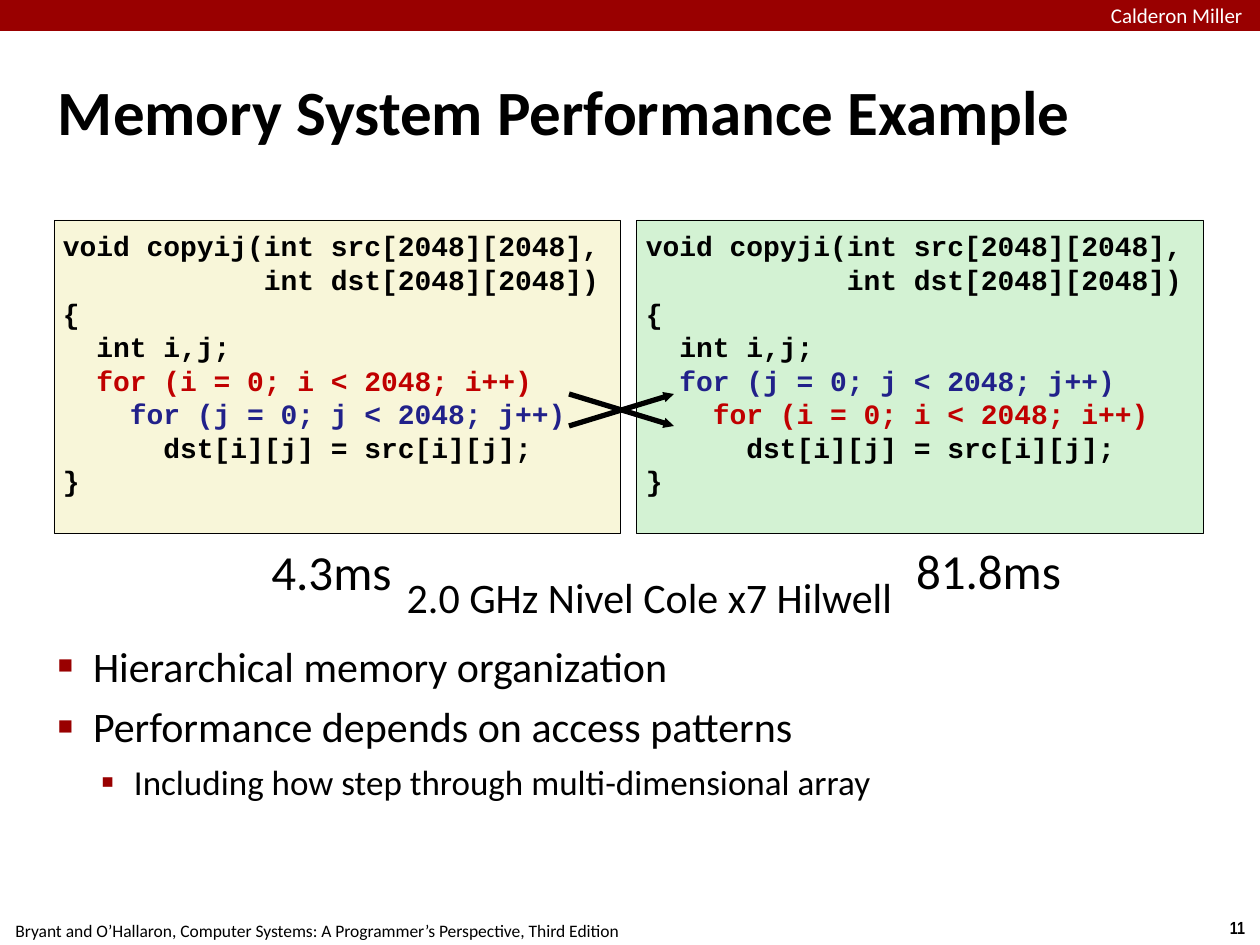
from dataclasses import dataclass

from lxml.etree import SubElement
from pptx import Presentation
from pptx.dml.color import RGBColor as RGB
from pptx.enum.shapes import MSO_CONNECTOR as Connector, MSO_SHAPE as Shape
from pptx.enum.text import MSO_ANCHOR as Anchor, MSO_AUTO_SIZE as AutoSize, PP_ALIGN as Align
from pptx.oxml.ns import qn
from pptx.util import Emu, Pt

PX_PER_INCH = 126


@dataclass(frozen=True)
class Theme:
    sans: str = "Calibri"
    narrow: str = "Arial Narrow"
    mono: str = "Courier New"
    black: str = "000000"
    white: str = "FFFFFF"
    crimson: str = "990000"
    cream: str = "F8F6D9"
    mint: str = "D3F2D3"
    i_loop: str = "C00000"
    j_loop: str = "21218A"
    title: int = 36
    timing: int = 28
    body: int = 24
    sub_body: int = 20
    code: int = 16
    header: int = 12
    footer: int = 10


THEME = Theme()

CODE = """void copy{0}{1}(int src[2048][2048],
            int dst[2048][2048])
{{
  int i,j;
  for ({0} = 0; {0} < 2048; {0}++)
    for ({1} = 0; {1} < 2048; {1}++)
      dst[i][j] = src[i][j];
}}"""

# Per level: size, space before, left margin px, hanging px, bullet, bullet percent
LEVELS = [
    (THEME.body, 6, 35, 35, "■", 60),
    (THEME.sub_body, 5, 76, 33, "▪", 110),
]


def px(length):
    return Emu(round(length * 914400 / PX_PER_INCH))


def place(shape, box):
    shape.left, shape.top, shape.width, shape.height = map(px, box)


def set_insets(text_frame, horizontal, vertical):
    text_frame.margin_left = text_frame.margin_right = px(horizontal)
    text_frame.margin_top = text_frame.margin_bottom = px(vertical)


def format_runs(paragraph, size, color=THEME.black, font=THEME.sans, bold=False):
    for run in paragraph.runs:
        run.font.name = font
        run.font.size = Pt(size)
        run.font.bold = bold
        run.font.color.rgb = RGB.from_string(color)


def add_rectangle(slide, box, fill, outline=None):
    shape = slide.shapes.add_shape(Shape.RECTANGLE, *map(px, box))
    shape.shadow.inherit = False
    shape.fill.solid()
    shape.fill.fore_color.rgb = RGB.from_string(fill)
    if outline:
        shape.line.color.rgb = RGB.from_string(outline)
        shape.line.width = Pt(0.5)
    else:
        shape.line.fill.background()
    return shape


def add_label(slide, box, text, size, insets=(5, 5), align=Align.CENTER, **style):
    text_frame = slide.shapes.add_textbox(*map(px, box)).text_frame
    text_frame.word_wrap = False
    text_frame.auto_size = AutoSize.SHAPE_TO_FIT_TEXT
    set_insets(text_frame, *insets)
    text_frame.text = text
    paragraph = text_frame.paragraphs[0]
    paragraph.alignment = align
    format_runs(paragraph, size, **style)


def add_code_panel(slide, left, fill, outer, inner):
    panel = add_rectangle(slide, (left, 220, 567, 314), fill, THEME.black)
    text_frame = panel.text_frame
    text_frame.word_wrap = True
    text_frame.vertical_anchor = Anchor.TOP
    set_insets(text_frame, 9, 9)
    text_frame.text = CODE.format(outer, inner)
    loop_colors = {"for (i": THEME.i_loop, "for (j": THEME.j_loop}
    for paragraph in text_frame.paragraphs:
        color = loop_colors.get(paragraph.text.strip()[:6], THEME.black)
        paragraph.alignment = Align.LEFT
        format_runs(paragraph, THEME.code, color, THEME.mono, bold=True)


def add_arrow(slide, start, end):
    arrow = slide.shapes.add_connector(Connector.STRAIGHT, *map(px, start + end))
    arrow.line.color.rgb = RGB.from_string(THEME.black)
    arrow.line.width = Pt(3)
    SubElement(arrow.line._get_or_add_ln(), qn("a:tailEnd"), type="triangle", w="sm", len="sm")
    SubElement(arrow._element.spPr, qn("a:effectLst"))


def fill_title(slide, text):
    title = slide.shapes.title
    place(title, (53, 35, 1155, 150))
    text_frame = title.text_frame
    text_frame.text = text
    text_frame.vertical_anchor = Anchor.MIDDLE
    text_frame.auto_size = AutoSize.NONE
    set_insets(text_frame, 5, 5)
    text_frame.paragraphs[0].alignment = Align.LEFT
    format_runs(text_frame.paragraphs[0], THEME.title, bold=True)


def set_bullet(paragraph, margin, hanging, character, percent):
    properties = paragraph._p.get_or_add_pPr()
    properties.set("marL", str(px(margin)))
    properties.set("indent", str(px(-hanging)))
    color = SubElement(properties, qn("a:buClr"))
    SubElement(color, qn("a:srgbClr"), val=THEME.crimson)
    SubElement(properties, qn("a:buSzPct"), val=str(percent * 1000))
    SubElement(properties, qn("a:buFont"), typeface="Arial")
    SubElement(properties, qn("a:buChar"), char=character)


def fill_body(slide, items):
    body = slide.placeholders[1]
    place(body, (53, 635, 1155, 306))
    text_frame = body.text_frame
    text_frame.text = "\n".join(text for _, text in items)
    text_frame.auto_size = AutoSize.NONE
    set_insets(text_frame, 5, 5)
    for paragraph, (level, _) in zip(text_frame.paragraphs, items):
        size, space_before, *bullet = LEVELS[level]
        paragraph.level = level
        paragraph.space_before = Pt(space_before)
        set_bullet(paragraph, *bullet)
        format_runs(paragraph, size)


def main():
    presentation = Presentation()
    presentation.slide_width, presentation.slide_height = px(1260), px(945)
    slide = presentation.slides.add_slide(presentation.slide_layouts[1])

    # Footer and header
    add_label(slide, (1216, 911, 43, 34), "11", THEME.footer, (13, 6),
              font=THEME.narrow, bold=True)
    add_label(slide, (-3, 914, 640, 34),
              "Bryant and O’Hallaron, Computer Systems: A Programmer’s Perspective, Third Edition",
              THEME.footer, (13, 6))
    add_rectangle(slide, (0, 0, 1261, 31), THEME.crimson)
    add_label(slide, (1111, 3, 140, 24), "Calderon Miller", THEME.header, (0, 0),
              Align.LEFT, color=THEME.white)

    # Title and conclusions
    fill_title(slide, "Memory System Performance Example")
    fill_body(slide, [
        (0, "Hierarchical memory organization"),
        (0, "Performance depends on access patterns"),
        (1, "Including how step through multi-dimensional array"),
    ])

    # Code with the two loop orders, swapped by the crossing arrows
    add_code_panel(slide, 637, THEME.mint, "j", "i")
    add_code_panel(slide, 54, THEME.cream, "i", "j")
    upper, lower = 394, 426
    add_arrow(slide, (569, upper), (674, lower))
    add_arrow(slide, (569, lower), (674, upper))

    # Timings and the processor they were measured on
    add_label(slide, (910, 535, 157, 71), "81.8ms", THEME.timing)
    add_label(slide, (258, 535, 147, 72), "4.3ms", THEME.timing, (13, 6))
    add_label(slide, (396, 567, 507, 62), "2.0 GHz Nivel Cole x7 Hilwell", THEME.body)

    presentation.save("out.pptx")


if __name__ == "__main__":
    main()
